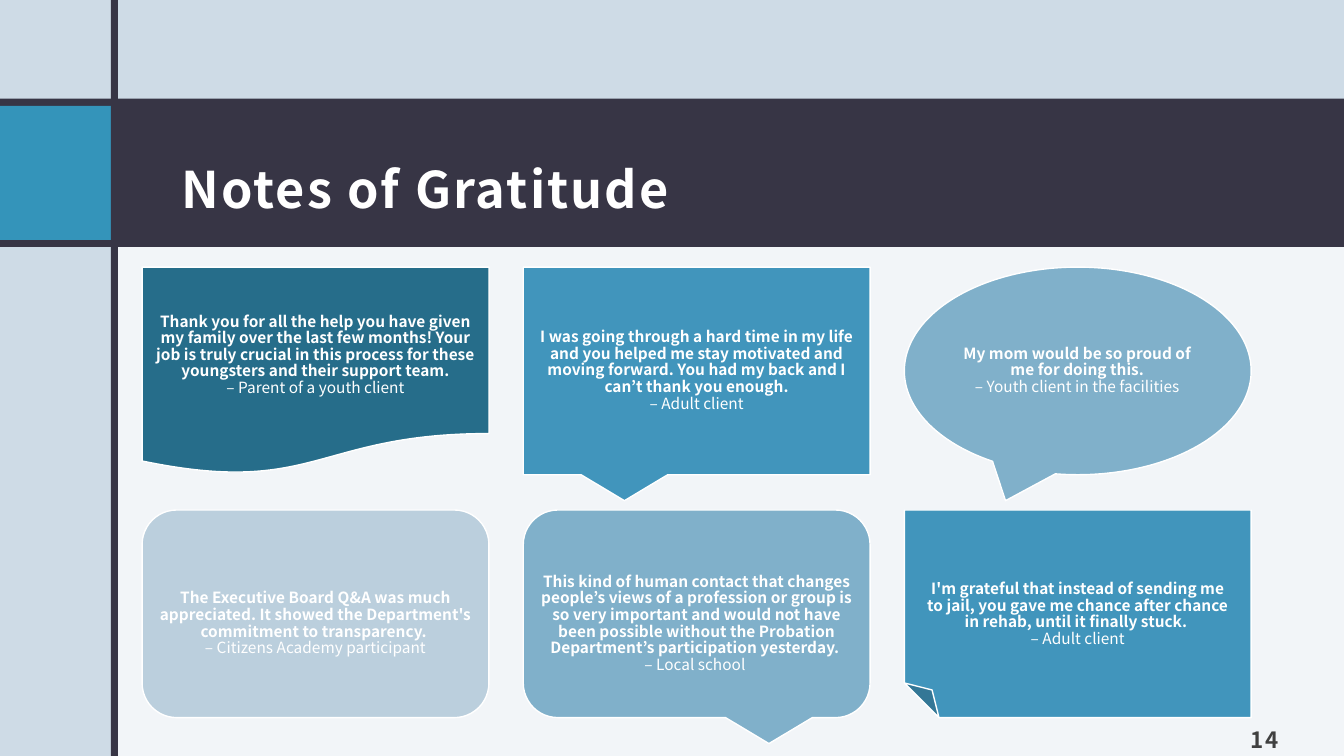
from pptx import Presentation
from pptx.dml.color import RGBColor
from pptx.enum.shapes import MSO_SHAPE as Shape
from pptx.enum.text import MSO_ANCHOR as Anchor, PP_ALIGN as Align
from pptx.oxml.ns import qn
from pptx.util import Inches, Pt
from lxml import etree

FONT = "Noto Sans CJK JP"
WIDTH, HEIGHT = 13.33, 7.5
WHITE, DARK, TEAL, PALE = "FFFFFF", "373545", "3494BA", "CEDBE6"

presentation = Presentation()
presentation.slide_width, presentation.slide_height = Inches(WIDTH), Inches(HEIGHT)
slide = presentation.slides.add_slide(presentation.slide_layouts[6])
slide.background.fill.solid()
slide.background.fill.fore_color.rgb = RGBColor.from_string(PALE)


def add_block(kind, box, color, outline=None):
    shape = slide.shapes.add_shape(kind, *map(Inches, box))
    shape.shadow.inherit = False
    shape.fill.solid()
    shape.fill.fore_color.rgb = RGBColor.from_string(color)
    if outline:
        shape.line.color.rgb = RGBColor.from_string(outline)
        shape.line.width = Pt(1)
    else:
        shape.line.fill.background()
    return shape


def add_text(box, insets, lines, size, color, align, anchor=Anchor.MIDDLE, spacing=None, tracking=0):
    """Write lines in one box: the first is bold, the rest are regular."""
    frame = slide.shapes.add_textbox(*map(Inches, box)).text_frame
    frame.word_wrap = True
    frame.vertical_anchor = anchor
    (frame.margin_left, frame.margin_top,
     frame.margin_right, frame.margin_bottom) = map(Inches, insets)
    for index, line in enumerate(lines):
        paragraph = frame.add_paragraph() if index else frame.paragraphs[0]
        paragraph.alignment = align
        paragraph.line_spacing = spacing
        run = paragraph.add_run()
        run.text = line
        if tracking:
            run._r.get_or_add_rPr().set("spc", str(tracking))
        font = paragraph.font
        font.name, font.size, font.bold = FONT, Pt(size), index == 0
        font.color.rgb = RGBColor.from_string(color)
    return frame


# Content panel, title band and side accents
panel = add_block(Shape.RECTANGLE, (1.14, 2.33, WIDTH - 1.14, HEIGHT - 2.33), WHITE)
panel_color = panel._element.spPr.find(qn("a:solidFill"))[0]
etree.SubElement(panel_color, qn("a:alpha"), val="75000")
add_block(Shape.RECTANGLE, (0, 0.98, WIDTH, 1.47), DARK)
add_text((1.68, 1.14, 10.95, 1.13), (0.12, 0.12, 0.12, 0.1), ["Notes of Gratitude"],
         36, WHITE, Align.LEFT, spacing=1.5, tracking=150)
add_block(Shape.RECTANGLE, (0, 1.05, 1.1, 1.33), TEAL)
add_block(Shape.RECTANGLE, (1.1, 0, 0.07, HEIGHT), DARK)

# Notes: shape, colour, text area inside the card, insets, quote, author
CARD_WIDTH, CARD_HEIGHT = 3.44, 2.06
LEFT, TOP, COLUMN_STEP, ROW_STEP, COLUMNS = 1.41, 2.65, 3.78, 2.41, 3
FULL = (0, 0, CARD_WIDTH, CARD_HEIGHT)
INNER = (0.1, 0.1, CARD_WIDTH - 0.2, CARD_HEIGHT - 0.2)
EVEN = (0.05,) * 4
LOWERED = (0, 0.2, 0, 0)
notes = [
    (Shape.FLOWCHART_DOCUMENT, "266D8A", (0, 0, CARD_WIDTH, 1.65), (0.1, 0.1, 0.1, 0),
     "Thank you for all the help you have given my family over the last few months! "
     "Your job is truly crucial in this process for these youngsters and their support team.",
     "– Parent of a youth client"),
    (Shape.RECTANGULAR_CALLOUT, "4195BC", FULL, EVEN,
     "I was going through a hard time in my life and you helped me stay motivated and "
     "moving forward. You had my back and I can’t thank you enough.",
     "– Adult client"),
    (Shape.OVAL_CALLOUT, "80B0CA", (0.5, 0.3, 2.43, 1.46), EVEN,
     "My mom would be so proud of me for doing this.",
     "– Youth client in the facilities"),
    (Shape.FLOWCHART_ALTERNATE_PROCESS, "BBCFDD", INNER, LOWERED,
     "The Executive Board Q&A was much appreciated. It showed the Department's "
     "commitment to transparency. ",
     "– Citizens Academy participant"),
    (Shape.ROUNDED_RECTANGULAR_CALLOUT, "80B0CA", INNER, LOWERED,
     "This kind of human contact that changes people’s views of a profession or group is "
     "so very important and would not have been possible without the Probation "
     "Department’s participation yesterday. ",
     "– Local school "),
    (Shape.FOLDED_CORNER, "4195BC", (0, 0, CARD_WIDTH, 1.72), (0.2, 0.4, 0.2, 0.05),
     "I'm grateful that instead of sending me to jail, you gave me chance after chance "
     "in rehab, until it finally stuck. ",
     "– Adult client"),
]
for index, (kind, color, area, insets, quote, author) in enumerate(notes):
    row, column = divmod(index, COLUMNS)
    x, y = LEFT + column * COLUMN_STEP, TOP + row * ROW_STEP
    card = add_block(kind, (x, y, CARD_WIDTH, CARD_HEIGHT), color, WHITE)
    if row == 1:  # the lower row is mirrored
        card._element.spPr.get_or_add_xfrm().set("flipH", "1")
    dx, dy, width, height = area
    add_text((x + dx, y + dy, width, height), insets, [quote, author],
             11, WHITE, Align.CENTER, spacing=0.9)

# Page number
number = add_text((11.73, 7.07, 1.07, 0.5), (0.12, 0.12, 0.12, 0.1), ["14"],
                  16, "404040", Align.RIGHT, Anchor.BOTTOM, tracking=150)
number.paragraphs[0].space_after = Pt(6)

presentation.save("out.pptx")
